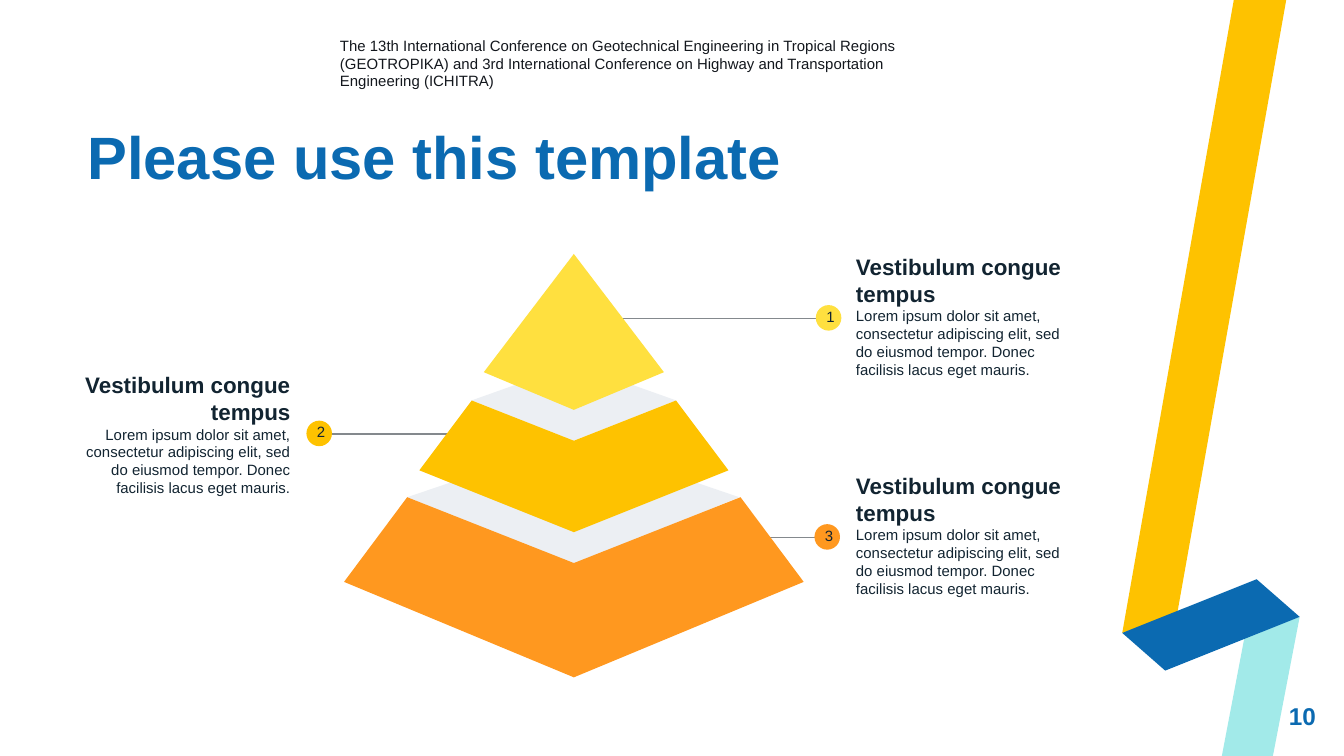
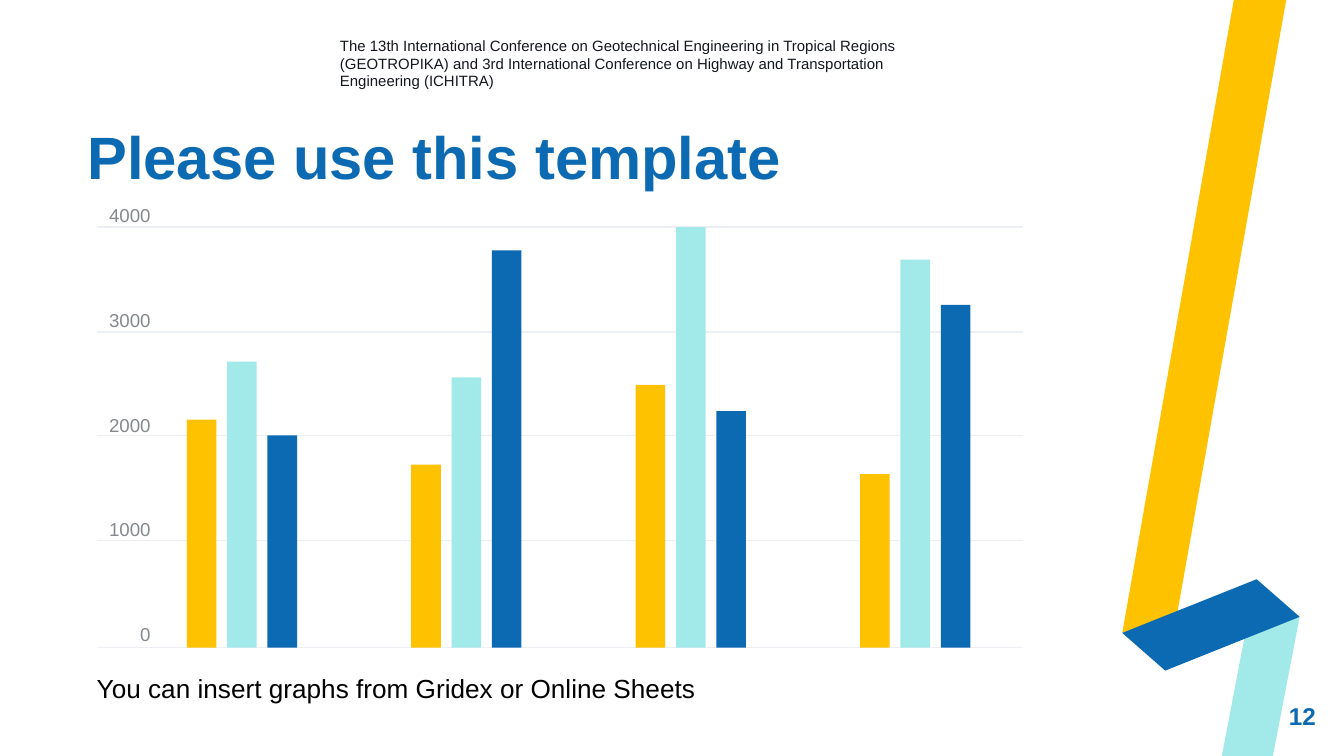
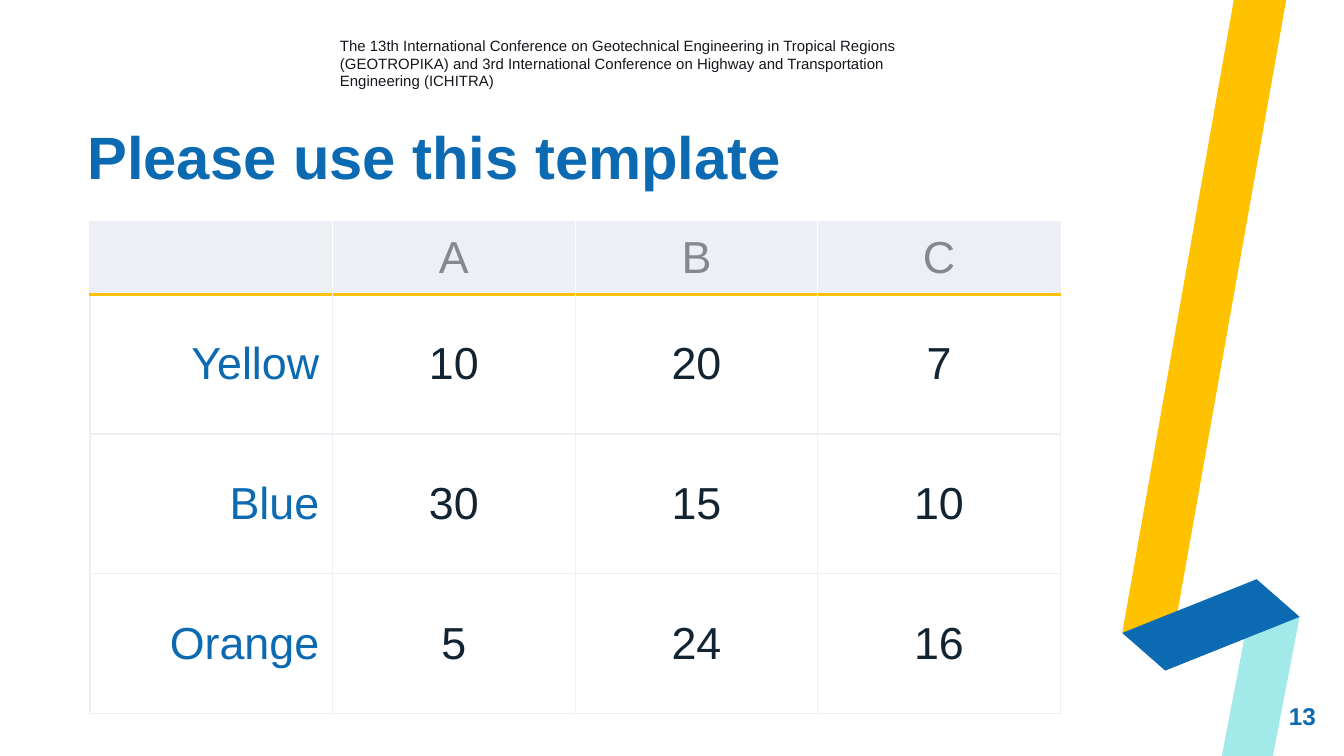
from dataclasses import dataclass

import pptx
import pptx.util
import pptx.dml.color
import pptx.enum.shapes
import pptx.enum.text
import pptx.oxml
import pptx.oxml.ns
from lxml import etree

Inches = pptx.util.Inches
Pt = pptx.util.Pt
Align = pptx.enum.text.PP_ALIGN
Anchor = pptx.enum.text.MSO_ANCHOR
Preset = pptx.enum.shapes.MSO_SHAPE


@dataclass(frozen=True)
class Theme:
    font: str = "Arial"
    # Colours
    blue: str = "0B6AB1"
    aqua: str = "A2EAE9"
    amber: str = "FEC200"
    yellow: str = "FFE03F"
    orange: str = "FF981F"
    ink: str = "122431"
    header_ink: str = "13171D"
    black: str = "000000"
    gray: str = "84898D"
    pale: str = "ECEFF3"
    white: str = "FFFFFF"
    # Type sizes
    title: int = 32
    table: int = 24
    note: int = 14
    page: int = 13
    heading: int = 12
    axis: int = 10
    small: int = 8


THEME = Theme()
TITLE = "Please use this template"
CONFERENCE = (
    "The 13th International Conference on Geotechnical Engineering in Tropical "
    "Regions (GEOTROPIKA) and 3rd International Conference on Highway and "
    "Transportation Engineering (ICHITRA)"
)
RIBBON = [
    (THEME.amber, [(9.18, 0), (9.57, 0), (8.76, 4.56), (8.35, 4.71)]),
    (THEME.aqua, [(9.09, 5.63), (9.26, 4.74), (9.67, 4.59), (9.47, 5.63)]),
    (THEME.blue, [(8.35, 4.71), (9.35, 4.31), (9.67, 4.59), (8.67, 4.99)]),
]


def rgb(color):
    return pptx.dml.color.RGBColor.from_string(color)


class Painter:
    """Holds the theme and the current slide, and draws elements on it."""

    def __init__(self, deck, theme):
        self.deck = deck
        self.theme = theme
        self.slide = None

    def start_slide(self, number):
        """Add a slide with the ribbon, conference line, page number and title."""
        theme = self.theme
        self.slide = self.deck.slides.add_slide(self.deck.slide_layouts[6])
        for color, points in RIBBON:
            self.outline(points, color)
        self.text(2.53, 0.27, 4.67, 0.43, [CONFERENCE], theme.small, theme.header_ink)
        self.text(9.19, 5.11, 0.6, 0.43, [str(number)], theme.page, theme.blue,
                  bold=True, align=Align.RIGHT, anchor=Anchor.MIDDLE)
        title = self.text(0.65, 0.99, 5.77, 0.43, [TITLE], theme.title, theme.blue,
                          bold=True, anchor=Anchor.BOTTOM)
        title.paragraphs[0].line_spacing = 0.8

    def style(self, para, size, color, bold=False, align=Align.LEFT):
        para.alignment = align
        for span in para.runs:
            span.font.name = self.theme.font
            span.font.size = Pt(size)
            span.font.bold = bold
            span.font.color.rgb = rgb(color)

    def text(self, left, top, width, height, lines, size, color, bold=False,
             align=Align.LEFT, anchor=Anchor.TOP, inset=0):
        box = self.slide.shapes.add_textbox(
            Inches(left), Inches(top), Inches(width), Inches(height))
        frame = box.text_frame
        frame.word_wrap = True
        frame.vertical_anchor = anchor
        frame.margin_left = frame.margin_right = Inches(inset)
        frame.margin_top = frame.margin_bottom = Inches(inset)
        frame.text = "\n".join(lines)
        for para in frame.paragraphs:
            self.style(para, size, color, bold, align)
        return frame

    def paint(self, shape, color):
        shape.shadow.inherit = False
        shape.fill.solid()
        shape.fill.fore_color.rgb = rgb(color)
        shape.line.fill.background()

    def shape(self, preset, left, top, width, height, color):
        self.paint(self.slide.shapes.add_shape(
            preset, Inches(left), Inches(top), Inches(width), Inches(height)), color)

    def outline(self, points, color):
        corners = [(Inches(x), Inches(y)) for x, y in points]
        builder = self.slide.shapes.build_freeform(*corners[0])
        builder.add_line_segments(corners[1:], close=True)
        self.paint(builder.convert_to_shape(), color)

    def line(self, start_x, end_x, y, color):
        connector = self.slide.shapes.add_connector(
            pptx.enum.shapes.MSO_CONNECTOR.STRAIGHT,
            Inches(start_x), Inches(y), Inches(end_x), Inches(y))
        connector.line.color.rgb = rgb(color)
        connector.line.width = Pt(0.75)
        properties = connector._element.spPr
        etree.SubElement(properties, pptx.oxml.ns.qn("a:effectLst"))

    def borders(self, cell, edges):
        """Edges maps L, R, T, B, in that order, to (colour, points)."""
        properties = cell._tc.get_or_add_tcPr()
        for index, (side, (color, width)) in enumerate(edges.items()):
            properties.insert(index, pptx.oxml.parse_xml(
                f'<a:ln{side} {pptx.oxml.ns.nsdecls("a")} w="{Pt(width)}">'
                f'<a:solidFill><a:srgbClr val="{color}"/></a:solidFill></a:ln{side}>'))

    def table(self, left, top, width, row_heights, rows):
        theme = self.theme
        columns = len(rows[0])
        table = self.slide.shapes.add_table(
            len(rows), columns, Inches(left), Inches(top),
            Inches(width), Inches(sum(row_heights))).table
        table.first_row = table.horz_banding = False
        for column in table.columns:
            column.width = Inches(width / columns)
        for row, height in zip(table.rows, row_heights):
            row.height = Inches(height)
        thin, rule = (theme.pale, 0.75), (theme.amber, 1.5)
        for r, values in enumerate(rows):
            for c, value in enumerate(values):
                cell = table.cell(r, c)
                cell.text = value
                cell.vertical_anchor = Anchor.MIDDLE
                cell.margin_left = cell.margin_right = Inches(0.1)
                cell.margin_top = cell.margin_bottom = Inches(0.07)
                inner = (theme.white, 0.75) if r == 0 else thin
                if r == 0:
                    cell.fill.solid()
                    cell.fill.fore_color.rgb = rgb(theme.pale)
                    color, align = theme.gray, Align.CENTER
                else:
                    cell.fill.background()
                    color, align = ((theme.blue, Align.RIGHT) if c == 0
                                    else (theme.ink, Align.CENTER))
                self.style(cell.text_frame.paragraphs[0], theme.table, color, align=align)
                self.borders(cell, {
                    "L": inner if c > 0 else thin,
                    "R": inner if c < columns - 1 else thin,
                    "T": rule if r == 1 else thin,
                    "B": rule if r == 0 else thin,
                })

    def callout(self, number, color, line_ends, y, badge_left, text_left, text_top, align):
        """A pointer line, a numbered badge, and a heading with body text."""
        theme = self.theme
        self.line(*line_ends, y, theme.gray)
        frame = self.text(
            text_left, text_top, 1.81, 1.34,
            ["Vestibulum congue tempus",
             "Lorem ipsum dolor sit amet, consectetur adipiscing elit, "
             "sed do eiusmod tempor. Donec facilisis lacus eget mauris."],
            theme.small, theme.ink, align=align, anchor=Anchor.MIDDLE, inset=0.1)
        heading, body = frame.paragraphs
        self.style(heading, theme.heading, theme.ink, bold=True, align=align)
        body.space_after = Pt(16)
        self.shape(Preset.OVAL, badge_left, y - 0.1, 0.19, 0.19, color)
        badge = self.text(badge_left - 0.02, y - 0.15, 0.24, 0.3, [str(number)],
                          theme.small, theme.ink, align=Align.CENTER, inset=0.1)
        badge.auto_size = pptx.enum.text.MSO_AUTO_SIZE.SHAPE_TO_FIT_TEXT
        badge.paragraphs[0].space_after = Pt(16)

    def mirrored(self, points, axis, color):
        """Draw the left half of a figure and its reflection."""
        self.outline(points, color)
        self.outline([(2 * axis - x, y) for x, y in points], color)


def pyramid_slide(painter):
    theme = painter.theme
    painter.start_slide(10)
    painter.callout(3, theme.orange, (5.69, 6.25), 4, 6.06, 6.27, 3.31, Align.LEFT)
    painter.callout(2, theme.amber, (3.35, 2.34), 3.23, 2.28, 0.45, 2.56, Align.RIGHT)
    painter.callout(1, theme.yellow, (4.59, 6.26), 2.37, 6.07, 6.27, 1.68, Align.LEFT)

    # Tiers from the base up, each with its pale top face
    axis = 4.27
    painter.outline([(3.03, 3.7), (axis, 4.2), (5.5, 3.7), (axis, 3.28)], theme.pale)
    painter.mirrored([(3.03, 3.7), (2.56, 4.33), (axis, 5.04), (axis, 4.19)],
                     axis, theme.orange)
    painter.outline([(3.51, 2.98), (axis, 3.28), (5.03, 2.98), (axis, 2.71)], theme.pale)
    painter.mirrored([(3.51, 2.98), (axis, 3.28), (axis, 3.96), (3.12, 3.5)],
                     axis, theme.amber)
    painter.mirrored([(axis, 1.89), (3.6, 2.77), (axis, 3.05)], axis, theme.yellow)


def bars_slide(painter):
    theme = painter.theme
    painter.start_slide(12)
    painter.text(0.72, 5, 8.13, 0.38, ["You can insert graphs from Gridex or Online Sheets"],
                 theme.note, theme.black).paragraphs[0].space_after = Pt(8)

    # Scale: grid lines and their values
    grid = {4000: 1.69, 3000: 2.47, 2000: 3.24, 1000: 4.02, 0: 4.82}
    for y in grid.values():
        painter.line(0.72, 7.61, y, theme.pale)
    axis = painter.text(0.72, 1.52, 0.4, 3.31, [str(tick) for tick in grid],
                        theme.axis, theme.gray, align=Align.RIGHT)
    for para in axis.paragraphs[1:]:
        para.space_before = Pt(44)
    axis.paragraphs[-1].space_after = Pt(44)

    # Four groups of three bars
    groups = [(2170, 2720, 2020), (1740, 2570, 3780), (2500, 4000, 2250), (1650, 3690, 3260)]
    colors = (theme.amber, theme.aqua, theme.blue)
    for group, values in enumerate(groups):
        for position, (value, color) in enumerate(zip(values, colors)):
            height = (grid[0] - grid[4000]) * value / 4000
            painter.shape(Preset.RECTANGLE, 1.39 + 1.67 * group + 0.3 * position,
                          grid[0] - height, 0.22, height, color)


def table_slide(painter):
    painter.start_slide(13)
    painter.table(0.67, 1.65, 7.22, [0.49, 1.04, 1.04, 1.04], [
        ["", "A", "B", "C"],
        ["Yellow", "10", "20", "7"],
        ["Blue", "30", "15", "10"],
        ["Orange", "5", "24", "16"],
    ])


def main():
    deck = pptx.Presentation()
    deck.slide_width = Inches(10)
    deck.slide_height = Inches(10 * 9 / 16)
    painter = Painter(deck, THEME)
    pyramid_slide(painter)
    bars_slide(painter)
    table_slide(painter)
    deck.save("out.pptx")


if __name__ == "__main__":
    main()
